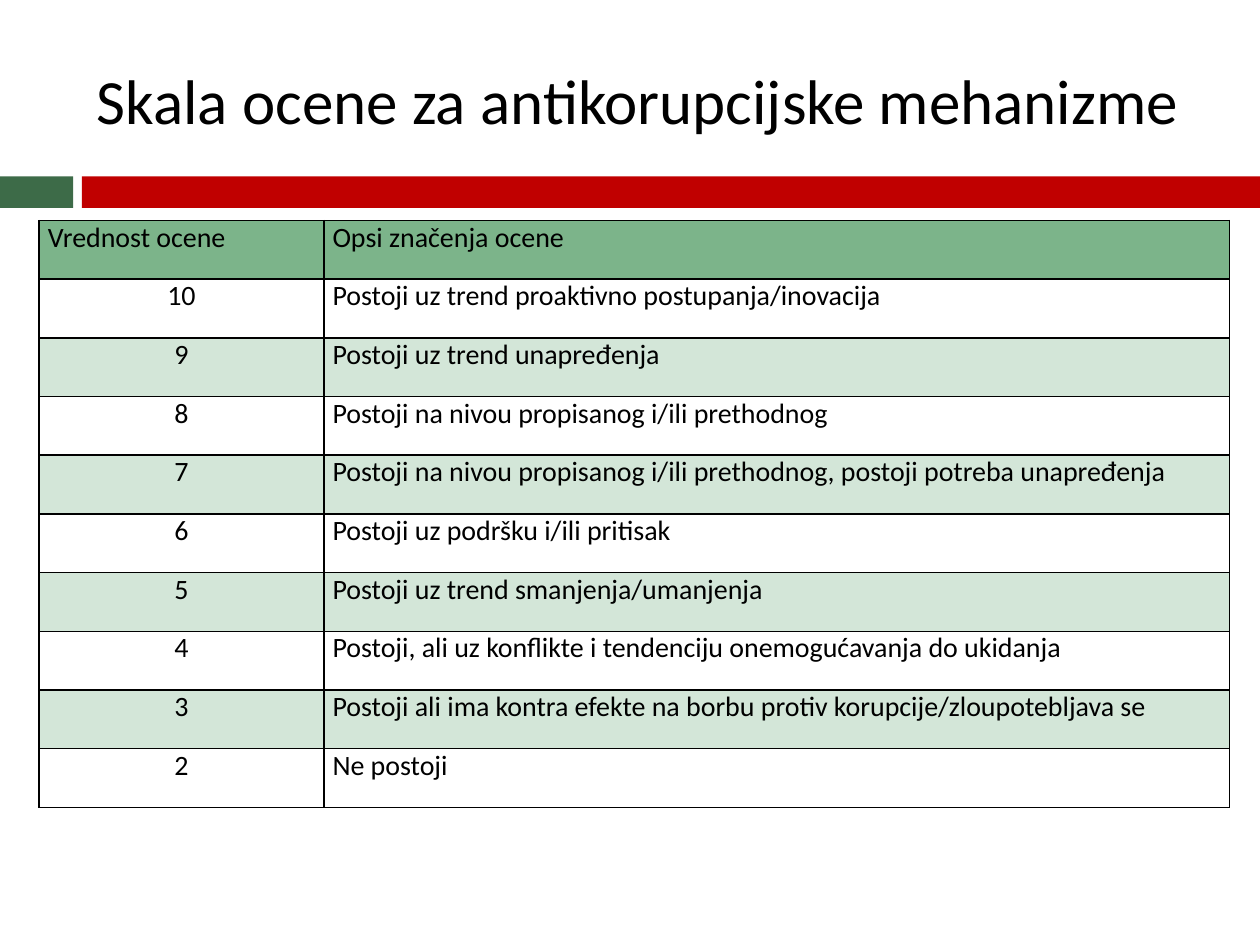
from lxml import etree
from pptx import Presentation
from pptx import util as u
from pptx.dml.color import RGBColor
from pptx.enum import shapes, text
from pptx.oxml import ns

FONT = "Calibri"
COLORS = {
    "text": "000000",
    "border": "000000",
    "green": "3D6B48",
    "red": "C00000",
    "header": "7CB48A",
    "band": "D3E6D8",
}
TITLE = "Skala ocene za antikorupcijske mehanizme"
HEADER = ("Vrednost ocene", "Opsi značenja ocene")
GRADES = [
    ("10", "Postoji uz trend proaktivno postupanja/inovacija"),
    ("9", "Postoji uz trend unapređenja"),
    ("8", "Postoji na nivou propisanog i/ili prethodnog"),
    ("7", "Postoji na nivou propisanog i/ili prethodnog, postoji potreba unapređenja"),
    ("6", "Postoji uz podršku i/ili pritisak"),
    ("5", "Postoji uz trend smanjenja/umanjenja"),
    ("4", "Postoji, ali uz konflikte i tendenciju onemogućavanja do ukidanja"),
    ("3", "Postoji ali ima kontra efekte na borbu protiv korupcije/zloupotebljava se"),
    ("2", "Ne postoji"),
]


def color(name):
    """Return the named palette colour."""
    return RGBColor.from_string(COLORS[name])


def write(frame, content, size, align=text.PP_ALIGN.LEFT):
    """Put one formatted paragraph into a text frame."""
    frame.text = content
    para = frame.paragraphs[0]
    para.alignment = align
    for span in para.runs:
        span.font.name = FONT
        span.font.size = u.Pt(size)
        span.font.color.rgb = color("text")


def add_bar(slide, left, width, fill):
    """Draw one part of the bar under the title."""
    bar = slide.shapes.add_shape(
        shapes.MSO_SHAPE.RECTANGLE,
        u.Inches(left), u.Inches(1.4), u.Inches(width), u.Inches(0.25),
    )
    bar.shadow.inherit = False
    bar.fill.solid()
    bar.fill.fore_color.rgb = color(fill)
    bar.line.fill.background()


def add_title(slide):
    """Add the slide title."""
    box = slide.shapes.add_textbox(
        u.Inches(0.67), u.Inches(0.25), u.Inches(8.92), u.Inches(1.08)
    )
    frame = box.text_frame
    frame.word_wrap = True
    frame.vertical_anchor = text.MSO_ANCHOR.MIDDLE
    write(frame, TITLE, 36)


def set_borders(cell):
    """Give a cell thin solid lines on all four sides."""
    properties = cell._tc.get_or_add_tcPr()
    for position, side in enumerate(("lnL", "lnR", "lnT", "lnB")):
        line = etree.Element(ns.qn(f"a:{side}"), w=str(u.Pt(1)))
        fill = etree.SubElement(line, ns.qn("a:solidFill"))
        etree.SubElement(fill, ns.qn("a:srgbClr"), val=COLORS["border"])
        properties.insert(position, line)


def fill_cell(cell, content, fill, align):
    """Set the text, margins, fill and borders of a cell."""
    cell.margin_left = cell.margin_right = u.Inches(0.07)
    cell.margin_top = cell.margin_bottom = 0
    write(cell.text_frame, content, 16, align)
    if fill:
        cell.fill.solid()
        cell.fill.fore_color.rgb = color(fill)
    else:
        cell.fill.background()
    set_borders(cell)


def add_grade_table(slide):
    """Add the table of grades with every second grade shaded."""
    rows = [HEADER, *GRADES]
    table = slide.shapes.add_table(
        len(rows), len(HEADER),
        u.Inches(0.31), u.Inches(1.75), u.Inches(9.45), u.Inches(4.66),
    ).table
    for column, width in zip(table.columns, (2.26, 7.19)):
        column.width = u.Inches(width)
    for r, row in enumerate(rows):
        fill = "header" if r == 0 else "band" if r % 2 == 0 else None
        for c, content in enumerate(row):
            centred = r > 0 and c == 0
            align = text.PP_ALIGN.CENTER if centred else text.PP_ALIGN.LEFT
            fill_cell(table.cell(r, c), content, fill, align)


def main():
    """Build and save the slide."""
    deck = Presentation()
    deck.slide_width = u.Inches(10)
    deck.slide_height = u.Inches(7.5)
    slide = deck.slides.add_slide(deck.slide_layouts[6])
    add_bar(slide, 0, 0.58, "green")
    add_bar(slide, 0.65, 9.35, "red")
    add_title(slide)
    add_grade_table(slide)
    deck.save("out.pptx")


if __name__ == "__main__":
    main()
